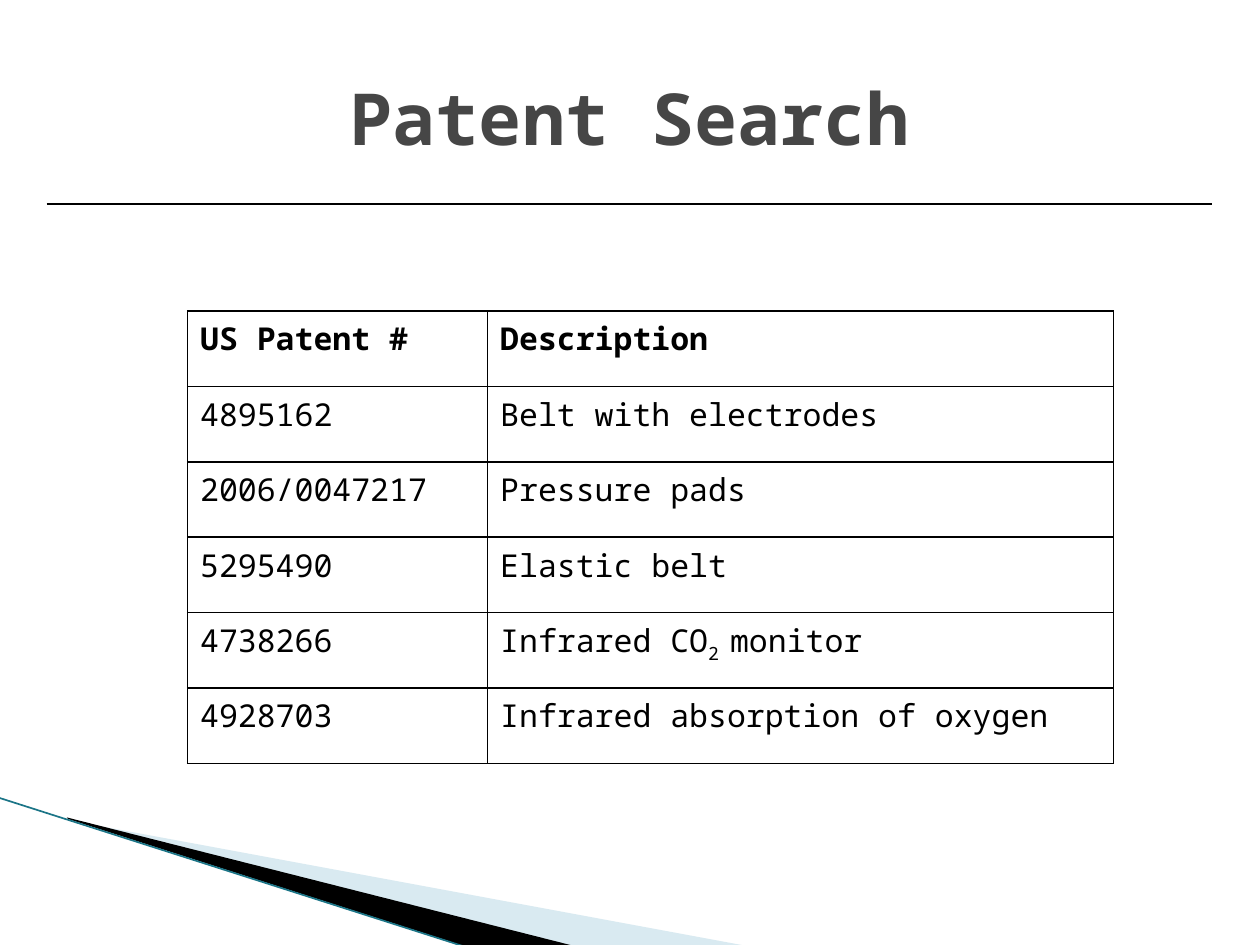
from dataclasses import dataclass

from lxml import etree
from pptx import Presentation
from pptx import util as u
from pptx.dml.color import RGBColor
from pptx.enum import shapes, text
from pptx.oxml import ns

COLOURS = {"ink": "000000", "title": "464646", "pale": "A0CBDC", "edge": "1B7587"}
FONT = "Noto Sans Mono"
SUBSCRIPT = "-25000"


@dataclass(frozen=True)
class Wedge:
    points: tuple[tuple[float, float], ...]
    colour: str
    opacity: int = 100


@dataclass(frozen=True)
class Rule:
    start: tuple[float, float]
    end: tuple[float, float]
    colour: str
    width: float


@dataclass(frozen=True)
class Patent:
    number: str
    description: tuple[str, ...]


WEDGES = (
    Wedge(((1.4, 16.54), (15.11, 19.08), (11.58, 19.08), (1.4, 16.51)), "pale", 40),
    Wedge(((1.35, 16.48), (11.61, 19.08), (9.45, 19.1), (1.37, 16.51)), "ink"),
)
RULES = (
    Rule((-0.03, 16.08), (9.42, 19.1), "edge", 0.95),
    Rule((0.94, 4.11), (24.43, 4.11), "ink", 1),
)
PATENTS = (
    Patent("US Patent #", ("Description",)),
    Patent("4895162", ("Belt with electrodes",)),
    Patent("2006/0047217", ("Pressure pads",)),
    Patent("5295490", ("Elastic belt",)),
    Patent("4738266", ("Infrared CO", "2 ", "monitor")),
    Patent("4928703", ("Infrared absorption of oxygen",)),
)
COLUMN_WIDTHS = (6.05, 12.62)
ROW_HEIGHT = 1.52


def rgb(name: str) -> RGBColor:
    """Return the named colour."""
    return RGBColor.from_string(COLOURS[name])


def add_run(paragraph, words: str, size: float, bold: bool, colour: str = "ink"):
    """Append a formatted run to a paragraph."""
    run = paragraph.add_run()
    run.text = words
    for attribute, value in {"name": FONT, "size": u.Pt(size), "bold": bold}.items():
        setattr(run.font, attribute, value)
    run.font.color.rgb = rgb(colour)
    return run


def draw_wedge(slide, wedge: Wedge) -> None:
    """Draw a filled corner wedge."""
    start, *others = [(u.Cm(x), u.Cm(y)) for x, y in wedge.points]
    builder = slide.shapes.build_freeform(*start)
    builder.add_line_segments(others, close=True)
    shape = builder.convert_to_shape()
    shape.shadow.inherit = False
    shape.line.fill.background()
    shape.fill.solid()
    shape.fill.fore_color.rgb = rgb(wedge.colour)
    if wedge.opacity < 100:
        colour = shape.fill._xPr.find(".//" + ns.qn("a:srgbClr"))
        etree.SubElement(colour, ns.qn("a:alpha"), val=str(wedge.opacity * 1000))


def draw_rule(slide, rule: Rule) -> None:
    """Draw a plain straight line."""
    ends = [u.Cm(value) for value in rule.start + rule.end]
    line = slide.shapes.add_connector(shapes.MSO_CONNECTOR.STRAIGHT, *ends)
    line.line.color.rgb = rgb(rule.colour)
    line.line.width = u.Pt(rule.width)
    etree.SubElement(line._element.spPr, ns.qn("a:effectLst"))


def draw_title(slide, words: str) -> None:
    """Draw the centred slide title."""
    title = slide.shapes.add_textbox(u.Cm(1.27), u.Cm(0.76), u.Cm(22.86), u.Cm(3.18))
    frame = title.text_frame
    settings = {"word_wrap": True, "vertical_anchor": text.MSO_ANCHOR.MIDDLE}
    for attribute, value in settings.items():
        setattr(frame, attribute, value)
    heading = frame.paragraphs[0]
    heading.alignment = text.PP_ALIGN.CENTER
    add_run(heading, words, 41, True, "title")


def fill_cell(cell, parts: tuple[str, ...], bold: bool) -> None:
    """Write the cell, lowering every second part, and outline it."""
    for index, part in enumerate(parts):
        run = add_run(cell.text_frame.paragraphs[0], part, 18, bold)
        if index % 2:
            run.font._element.set("baseline", SUBSCRIPT)
    properties = cell._tc.get_or_add_tcPr()
    for side in ("lnL", "lnR", "lnT", "lnB"):
        border = etree.SubElement(properties, ns.qn(f"a:{side}"), w=str(u.Pt(1)))
        fill = etree.SubElement(border, ns.qn("a:solidFill"))
        etree.SubElement(fill, ns.qn("a:srgbClr"), val=COLOURS["ink"])
    cell.fill.background()


def draw_patents(slide, patents: tuple[Patent, ...]) -> None:
    """Draw the patent table under its header row."""
    table = slide.shapes.add_table(
        len(patents), len(COLUMN_WIDTHS), u.Cm(3.78), u.Cm(6.27),
        u.Cm(sum(COLUMN_WIDTHS)), u.Cm(ROW_HEIGHT * len(patents)),
    ).table
    for attribute, value in {"first_row": False, "horz_banding": False}.items():
        setattr(table, attribute, value)
    for column, width in zip(table.columns, COLUMN_WIDTHS):
        column.width = u.Cm(width)
    for index, (row, patent) in enumerate(zip(table.rows, patents)):
        row.height = u.Cm(ROW_HEIGHT)
        for cell, parts in zip(row.cells, ((patent.number,), patent.description)):
            fill_cell(cell, parts, index == 0)


def main() -> None:
    """Build and save the patent search slide."""
    presentation = Presentation()
    presentation.slide_width, presentation.slide_height = u.Cm(25.4), u.Cm(19.05)
    slide = presentation.slides.add_slide(presentation.slide_layouts[6])
    for wedge in WEDGES:
        draw_wedge(slide, wedge)
    for rule in RULES:
        draw_rule(slide, rule)
    draw_title(slide, "Patent Search")
    draw_patents(slide, PATENTS)
    presentation.save("out.pptx")


if __name__ == "__main__":
    main()
